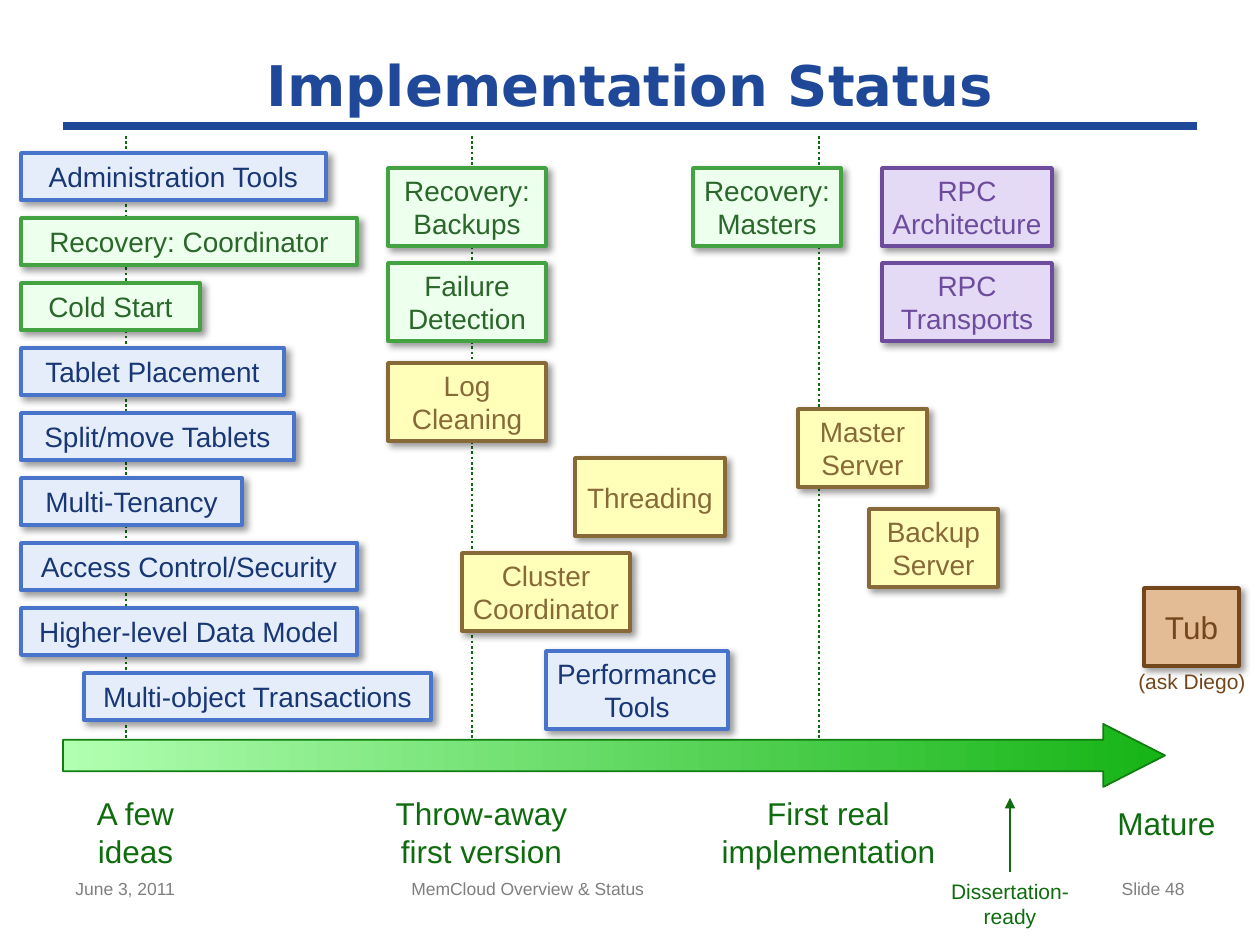
from lxml.etree import SubElement
from pptx import Presentation
from pptx.dml.color import RGBColor
from pptx.enum.dml import MSO_LINE as Dash
from pptx.enum.shapes import MSO_CONNECTOR as Link, MSO_SHAPE as Shape
from pptx.enum.text import MSO_ANCHOR as Anchor, PP_ALIGN as Align
from pptx.oxml import parse_xml
from pptx.oxml.ns import nsdecls, qn
from pptx.util import Emu, Pt

COLORS = {
    "title": "1F4899", "axis": "0E6C0E", "footer": "7F7F7F",
    "arrow_start": "B1FFB1", "arrow_end": "16B416", "arrow_line": "107E10",
    "blue_fill": "E6EDFA", "blue_line": "4974CB", "blue_text": "183774",
    "green_fill": "EDFFED", "green_line": "43A343", "green_text": "2B672B",
    "yellow_fill": "FFFFB9", "yellow_line": "886A38", "yellow_text": "886A38",
    "purple_fill": "E5DAF6", "purple_line": "6D4C9E", "purple_text": "6D4C9E",
    "brown_fill": "E3BC95", "brown_line": "73471B", "brown_text": "73471B",
}
SHADOW = (
    f'<a:effectLst {nsdecls("a")}><a:outerShdw blurRad="50800" dist="38100" '
    'dir="2700000" algn="tl" rotWithShape="0"><a:srgbClr val="000000">'
    '<a:alpha val="40000"/></a:srgbClr></a:outerShdw></a:effectLst>'
)


def px(length):
    return Emu(round(length * 914400 / 126))


def color(name):
    return RGBColor.from_string(COLORS[name])


class StatusSlide:
    font = "Arial"

    def __init__(self, deck):
        self.page = deck.slides.add_slide(deck.slide_layouts[6])

    def set_text(self, shape, text, size, ink, align=Align.CENTER, anchor=Anchor.TOP,
                 wrap=False, font=None, bold=False):
        frame = shape.text_frame
        frame.word_wrap = wrap
        frame.vertical_anchor = anchor
        para = frame.paragraphs[0]
        para.text = text
        para.alignment = align
        para.font.name = font or self.font
        para.font.size = Pt(size)
        para.font.bold = bold
        para.font.color.rgb = color(ink)

    def label(self, text, left, top, width, height, size, ink, **style):
        box = self.page.shapes.add_textbox(px(left), px(top), px(width), px(height))
        self.set_text(box, text, size, ink, **style)
        return box

    def card(self, text, theme, left, top, width, height=78, size=16):
        box = self.page.shapes.add_shape(
            Shape.RECTANGLE, px(left), px(top), px(width), px(height))
        box.fill.solid()
        box.fill.fore_color.rgb = color(f"{theme}_fill")
        box.line.color.rgb = color(f"{theme}_line")
        box.line.width = Pt(2)
        box._element.spPr.append(parse_xml(SHADOW))
        self.set_text(box, text, size, f"{theme}_text", anchor=Anchor.MIDDLE)

    def line(self, start, end, ink, width, dash=None, arrow=False):
        line = self.page.shapes.add_connector(
            Link.STRAIGHT, *map(px, start), *map(px, end))
        line.line.color.rgb = color(ink)
        line.line.width = Pt(width)
        if dash:
            line.line.dash_style = dash
        if arrow:
            SubElement(line.line._get_or_add_ln(), qn("a:tailEnd"), type="triangle")
        SubElement(line._element.spPr, qn("a:effectLst"))
        return line

    def timeline(self, left, top, width, height):
        arrow = self.page.shapes.add_shape(
            Shape.RIGHT_ARROW, px(left), px(top), px(width), px(height))
        arrow.adjustments[0] = 0.5
        arrow.adjustments[1] = 0.98
        arrow.shadow.inherit = False
        arrow.fill.gradient()
        arrow.fill.gradient_angle = 0
        for stop, name, place in zip(
                arrow.fill.gradient_stops, ("arrow_start", "arrow_end"), (0, 1)):
            stop.color.rgb = color(name)
            stop.position = place
        arrow.line.color.rgb = color("arrow_line")
        arrow.line.width = Pt(1)


IDEAS = [
    ("Administration Tools", "blue", 21, 305),
    ("Recovery: Coordinator", "green", 21, 336),
    ("Cold Start", "green", 21, 179),
    ("Tablet Placement", "blue", 21, 263),
    ("Split/move Tablets", "blue", 21, 273),
    ("Multi-Tenancy", "blue", 21, 221),
    ("Access Control/Security", "blue", 21, 336),
    ("Higher-level Data Model", "blue", 21, 336),
    ("Multi-object Transactions", "blue", 84, 347),
]
COMPONENTS = [
    ("Recovery:\nBackups", "green", 388, 168, 158),
    ("Failure\nDetection", "green", 388, 263, 158),
    ("Log\nCleaning", "yellow", 388, 363, 158),
    ("Threading", "yellow", 575, 458, 150),
    ("Cluster\nCoordinator", "yellow", 462, 553, 168),
    ("Performance\nTools", "blue", 546, 651, 182),
    ("Recovery:\nMasters", "green", 693, 168, 148),
    ("RPC\nArchitecture", "purple", 882, 168, 170),
    ("RPC\nTransports", "purple", 882, 263, 170),
    ("Master\nServer", "yellow", 798, 409, 129),
    ("Backup\nServer", "yellow", 869, 509, 129),
]
STAGES = [
    ("A few\nideas", 84, 788, 103),
    ("Throw-away\nfirst version", 382, 788, 199),
    ("First real\nimplementation", 708, 788, 241),
    ("Mature", 1104, 798, 125),
]
FOOTERS = [
    ("June 3, 2011", 63, 294, Align.LEFT),
    ("MemCloud Overview & Status", 399, 473, Align.LEFT),
    ("Slide 48", 903, 294, Align.RIGHT),
]


def main():
    deck = Presentation()
    deck.slide_width, deck.slide_height = px(1260), px(945)
    slide = StatusSlide(deck)

    slide.line((63, 126), (1197, 126), "title", 4.5)
    for x in (126, 472, 819):
        slide.line((x, 136), (x, 746), "axis", 1.5, dash=Dash.ROUND_DOT)
    slide.label("Implementation Status", 63, 42, 1134, 84, 32, "title",
                anchor=Anchor.MIDDLE, wrap=True, font="DejaVu Sans", bold=True)
    for text, left, width, align in FOOTERS:
        slide.label(text, left, 872, width, 54, 10, "footer", align=align, wrap=True)

    slide.timeline(63, 724, 1102, 63)
    for text, left, top, width in STAGES:
        height = 89 if "\n" in text else 50
        slide.label(text, left, top, width, height, 18, "axis")

    for row, (text, theme, left, width) in enumerate(IDEAS):
        slide.card(text, theme, left, 153 + 65 * row, width, height=47)
    for component in COMPONENTS:
        slide.card(*component)
    slide.card("Tub", "brown", 1144, 588, 95, size=18)
    slide.label("(ask Diego)", 1124, 662, 136, 38, 12, "brown_text", wrap=True)

    ready = slide.label("Dissertation-\nready", 938, 872, 144, 63, 12, "axis")
    pointer = slide.line((1010, 872), (1010, 798), "axis", 1.5, arrow=True)
    pointer.begin_connect(ready, 0)

    deck.save("out.pptx")


if __name__ == "__main__":
    main()
